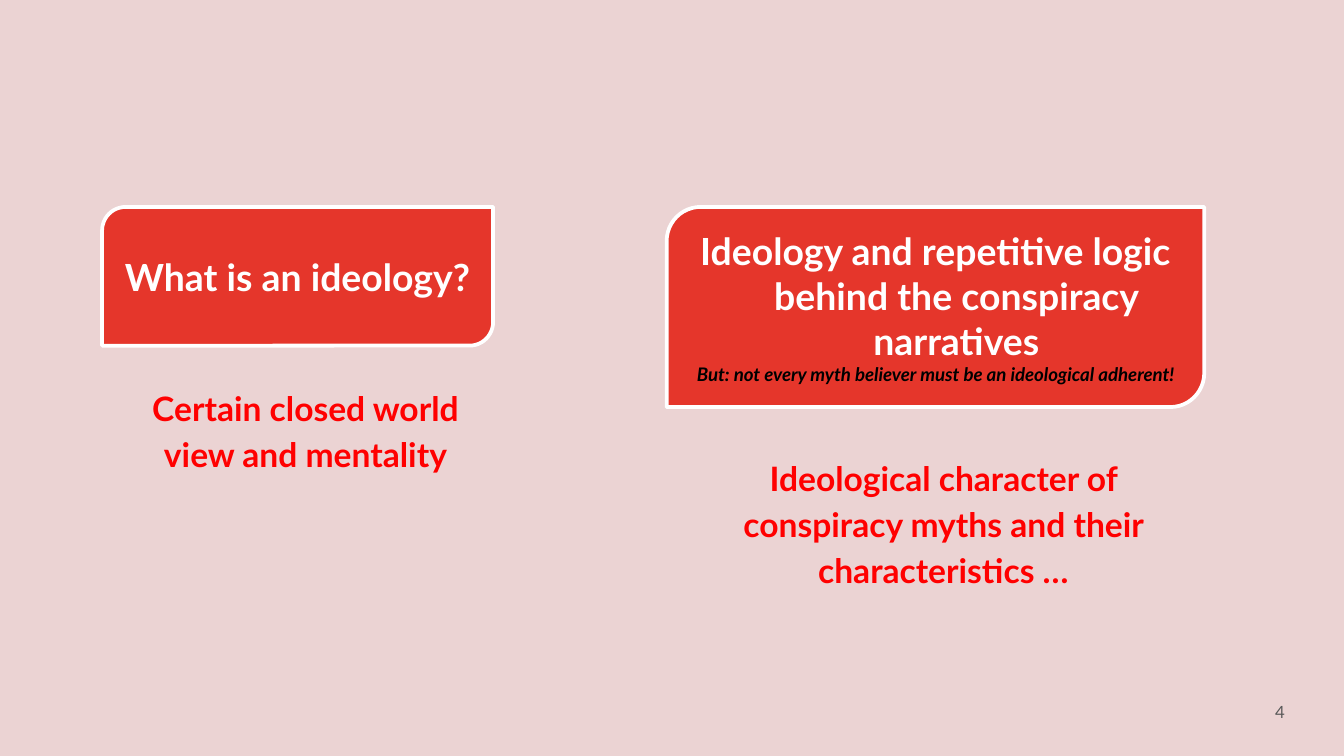
from pptx import Presentation
from pptx.dml.color import RGBColor
from pptx.enum.shapes import MSO_SHAPE as SHAPE
from pptx.enum.text import MSO_ANCHOR as ANCHOR, PP_ALIGN as ALIGN
from pptx.util import Cm, Pt


def rgb(value):
    return RGBColor.from_string(value)


def write(sp, texts, align, anchor, pad, left=0, first=0, spacing=None):
    """Fill a shape with (text, size, colour, bold, italic) paragraphs."""
    tf = sp.text_frame
    tf.word_wrap = True
    tf.vertical_anchor = anchor
    tf.margin_left = tf.margin_right = Cm(0.25)
    tf.margin_top = tf.margin_bottom = Cm(pad)
    for i, (text, size, colour, bold, italic) in enumerate(texts):
        p = tf.add_paragraph() if i else tf.paragraphs[0]
        p.text = text
        p.alignment = align
        p.line_spacing = spacing
        pPr = p._p.get_or_add_pPr()
        pPr.set("marL", str(Cm(left)))
        pPr.set("indent", str(Cm(first)))
        font = p.runs[0].font
        font.name, font.size = "Lato", Pt(size)
        font.bold, font.italic = bold, italic
        font.color.rgb = rgb(colour)


prs = Presentation()
prs.slide_width, prs.slide_height = Cm(25.4), Cm(14.28)
s = prs.slides.add_slide(prs.slide_layouts[6])
s.background.fill.solid()
s.background.fill.fore_color.rgb = rgb("EBD3D3")

# Two columns: left, width, heading height, answer top, heading texts, answer
columns = [
    (1.93, 7.39, 2.62, 6.96,
     [("What is an ideology?", 20, "FFFFFF", True, False)],
     "Certain closed world view and mentality"),
    (12.6, 10.16, 3.78, 8.28,
     [("Ideology and repetitive logic behind the conspiracy narratives",
       20, "FFFFFF", True, False),
      ("But: not every myth believer must be an ideological adherent!",
       10, "000000", True, True)],
     "Ideological character of conspiracy myths and their characteristics …"),
]
for left, width, height, answer_top, heading, answer in columns:
    # Heading box
    sp = s.shapes.add_shape(SHAPE.ROUND_2_DIAG_RECTANGLE, Cm(left), Cm(3.91),
                            Cm(width), Cm(height))
    sp.shadow.inherit = False
    sp.adjustments[0], sp.adjustments[1] = 0.17, 0
    sp.fill.solid()
    sp.fill.fore_color.rgb = rgb("E5362B")
    sp.line.color.rgb = rgb("FFFFFF")
    sp.line.width = Pt(2)
    write(sp, heading, ALIGN.CENTER, ANCHOR.MIDDLE, 0.13, 0.79, -0.79)

    # Answer below it
    sp = s.shapes.add_textbox(Cm(left), Cm(answer_top), Cm(width), Cm(3.28))
    write(sp, [(answer, 18, "FF0000", True, False)], ALIGN.CENTER, ANCHOR.TOP,
          0.25, left=0.3, spacing=1.15)

# Slide number
sp = s.shapes.add_textbox(Cm(23.01), Cm(12.9), Cm(1.52), Cm(1.09))
write(sp, [("4", 9, "595959", False, False)], ALIGN.RIGHT, ANCHOR.MIDDLE, 0.25)

prs.save("out.pptx")
